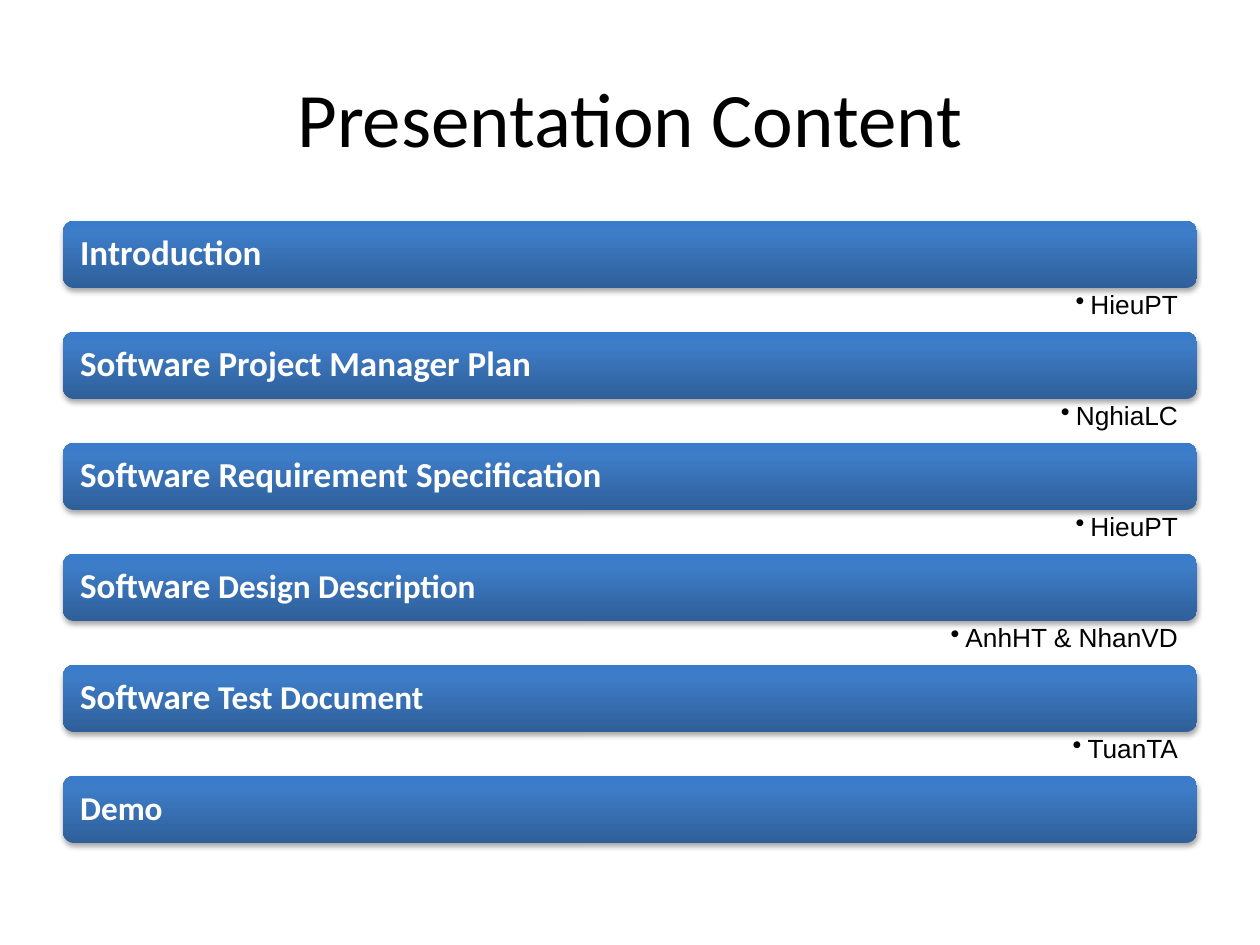
"""Build a one-slide agenda with six gradient bars and their presenters."""
from copy import deepcopy

from lxml import etree
from pptx import Presentation
from pptx.dml.color import RGBColor
from pptx.enum.shapes import MSO_SHAPE
from pptx.enum.text import MSO_ANCHOR, PP_ALIGN
from pptx.oxml.ns import qn
from pptx.util import Pt

PX = 914400 // 126
ROUNDED = MSO_SHAPE.ROUNDED_RECTANGLE
TOP, MIDDLE = MSO_ANCHOR.TOP, MSO_ANCHOR.MIDDLE
LEFT, CENTER, RIGHT = PP_ALIGN.LEFT, PP_ALIGN.CENTER, PP_ALIGN.RIGHT

BAR_X, BAR_Y, BAR_W, BAR_H, PITCH = 63, 221, 1134, 67, 111
STOPS = [(0, "2F5F99"), (0.8, "3D7CC7"), (1, "3A7CCB")]
TOPICS = [
    ([("Introduction", 20)], "HieuPT"),
    ([("Software Project Manager Plan", 20)], "NghiaLC"),
    ([("Software Requirement Specification", 20)], "HieuPT"),
    ([("Software", 20), (" Design Description", 19)], "AnhHT & NhanVD"),
    ([("Software", 20), (" Test Document", 19)], "TuanTA"),
    ([("Demo", 19)], None),
]


def rgb(value):
    return RGBColor.from_string(value)


def write(sp, runs, font, color, align, anchor, insets, bold=False):
    tf = sp.text_frame
    tf.word_wrap = True
    tf.vertical_anchor = anchor
    tf.margin_left, tf.margin_top, tf.margin_right, tf.margin_bottom = [v * PX for v in insets]
    p = tf.paragraphs[0]
    p.alignment = align
    for text, size in runs:
        r = p.add_run()
        r.text = text
        r.font.name = font
        r.font.size = Pt(size)
        r.font.bold = bold
        r.font.color.rgb = rgb(color)
    return p


prs = Presentation()
prs.slide_width, prs.slide_height = 1260 * PX, 945 * PX
s = prs.slides.add_slide(prs.slide_layouts[6])

title = s.shapes.add_textbox(63 * PX, 38 * PX, 1134 * PX, 157 * PX)
write(title, [("Presentation Content", 44)], "Calibri", "000000", CENTER, MIDDLE, (13, 6, 13, 6))

for i, (runs, presenter) in enumerate(TOPICS):
    y = BAR_Y + i * PITCH
    bar = s.shapes.add_shape(ROUNDED, BAR_X * PX, y * PX, BAR_W * PX, BAR_H * PX)
    bar.line.fill.background()
    bar.fill.gradient()
    bar.fill.gradient_angle = 90
    gs_list = bar._element.spPr.find(".//" + qn("a:gsLst"))
    gs_list.append(deepcopy(gs_list[-1]))
    for stop, (position, color) in zip(bar.fill.gradient_stops, STOPS):
        stop.position = position
        stop.color.rgb = rgb(color)

    bar.shadow.inherit = False
    effects = bar._element.spPr.find(qn("a:effectLst"))
    shadow = etree.SubElement(effects, qn("a:outerShdw"), blurRad="40000", dist="23000",
                              dir="5400000", rotWithShape="0")
    black = etree.SubElement(shadow, qn("a:srgbClr"), val="000000")
    etree.SubElement(black, qn("a:alpha"), val="35000")
    p = write(bar, runs, "Calibri", "FFFFFF", LEFT, MIDDLE, (14, 10, 14, 10), True)
    p.line_spacing = 0.9

    if presenter:
        box = s.shapes.add_textbox(BAR_X * PX, (y + BAR_H) * PX, BAR_W * PX, 43 * PX)
        p = write(box, [(presenter, 15)], "Arial", "000000", RIGHT, TOP, (37, 4, 19, 4))
        p.level = 1
        p.line_spacing = 0.9
        pPr = p._p.get_or_add_pPr()
        pPr.set("marL", str(15 * PX))
        pPr.set("indent", str(-15 * PX))
        etree.SubElement(pPr, qn("a:buChar"), char="•")

prs.save("out.pptx")
